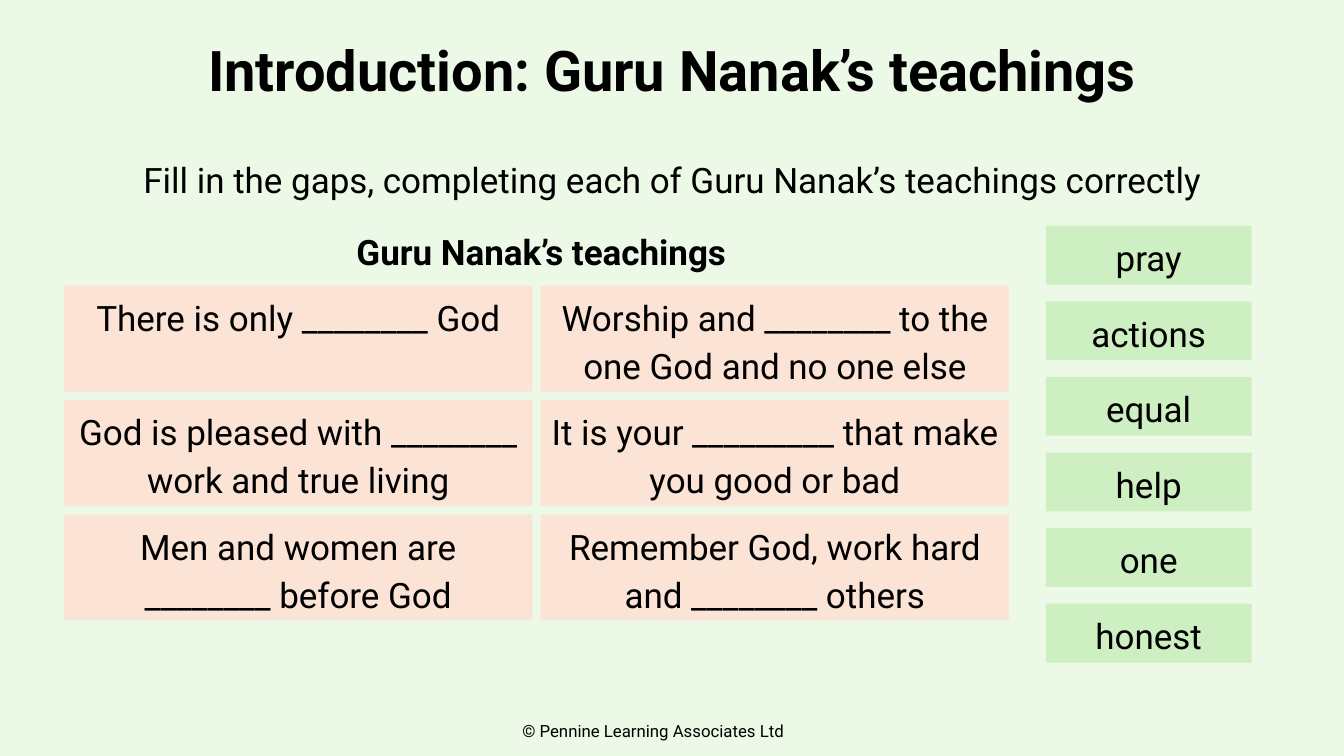
"""Build a fill-in-the-gaps slide about Guru Nanak's teachings."""
from dataclasses import dataclass

from pptx import Presentation
from pptx.dml.color import RGBColor
from pptx.enum.shapes import MSO_SHAPE
from pptx.enum.text import MSO_ANCHOR, MSO_AUTO_SIZE, PP_ALIGN
from pptx.slide import Slide
from pptx.text.text import TextFrame
from pptx.util import Emu, Pt

EMU_PER_PX = 9525
RECTANGLE = MSO_SHAPE.RECTANGLE
TOP, MIDDLE = MSO_ANCHOR.TOP, MSO_ANCHOR.MIDDLE
FIXED, GROW = MSO_AUTO_SIZE.NONE, MSO_AUTO_SIZE.SHAPE_TO_FIT_TEXT
LEFT, CENTER = PP_ALIGN.LEFT, PP_ALIGN.CENTER


@dataclass(frozen=True)
class Theme:
    font: str = "Roboto"
    background: RGBColor = RGBColor(0xEC, 0xF9, 0xE7)
    teaching: RGBColor = RGBColor(0xFB, 0xE3, 0xD6)
    answer: RGBColor = RGBColor(0xCE, 0xEF, 0xC1)
    ink: RGBColor = RGBColor(0, 0, 0)
    title_size: int = 40
    body_size: int = 25
    footer_size: int = 12


THEME = Theme()


@dataclass(frozen=True)
class Box:
    left: int
    top: int
    width: int
    height: int

    def emu(self) -> tuple[Emu, ...]:
        return tuple(
            Emu(length * EMU_PER_PX)
            for length in (self.left, self.top, self.width, self.height)
        )


@dataclass(frozen=True)
class TextStyle:
    size: int = THEME.body_size
    bold: bool = False
    align: PP_ALIGN = CENTER
    line_spacing: float = 1.14
    anchor: MSO_ANCHOR = TOP
    auto_size: MSO_AUTO_SIZE = GROW


BODY = TextStyle()
INSTRUCTION = TextStyle(line_spacing=1.0)
HEADING = TextStyle(bold=True)
FOOTER = TextStyle(size=THEME.footer_size, align=LEFT, line_spacing=1.0)
TITLE = TextStyle(
    size=THEME.title_size, bold=True, line_spacing=0.9, anchor=MIDDLE, auto_size=FIXED
)

TEACHINGS = (
    ("There is only ________ God", "Worship and ________ to the one God and no one else"),
    (
        "God is pleased with ________ work and true living",
        "It is your _________ that make you good or bad",
    ),
    ("Men and women are ________ before God", "Remember God, work hard and ________ others"),
)
ANSWERS = ("pray", "actions", "equal", "help", "one", "honest")

FIRST_TEACHING = Box(61, 272, 446, 101)
TEACHING_STEP_X, TEACHING_STEP_Y = 454, 109
FIRST_ANSWER = Box(996, 215, 196, 56)
ANSWER_STEP = 72


def write_text(frame: TextFrame, text: str, style: TextStyle) -> None:
    frame.word_wrap = True
    frame.auto_size = style.auto_size
    frame.vertical_anchor = style.anchor
    paragraph = frame.paragraphs[0]
    paragraph.alignment = style.align
    paragraph.line_spacing = style.line_spacing
    run = paragraph.add_run()
    run.text = text
    run.font.name = THEME.font
    run.font.size = Pt(style.size)
    run.font.bold = style.bold
    run.font.color.rgb = THEME.ink


def add_title(slide: Slide, box: Box, text: str) -> None:
    title = slide.shapes.title
    title.left, title.top, title.width, title.height = box.emu()
    write_text(title.text_frame, text, TITLE)


def add_label(slide: Slide, box: Box, text: str, style: TextStyle) -> None:
    label = slide.shapes.add_textbox(*box.emu())
    write_text(label.text_frame, text, style)


def add_card(
    slide: Slide, box: Box, text: str, fill: RGBColor, style: TextStyle = BODY
) -> None:
    card = slide.shapes.add_shape(RECTANGLE, *box.emu())
    card.shadow.inherit = False
    card.fill.solid()
    card.fill.fore_color.rgb = fill
    card.line.fill.background()
    write_text(card.text_frame, text, style)


def add_teachings(slide: Slide) -> None:
    first = FIRST_TEACHING
    for row, teachings in enumerate(TEACHINGS):
        for column, teaching in enumerate(teachings):
            box = Box(
                first.left + column * TEACHING_STEP_X,
                first.top + row * TEACHING_STEP_Y,
                first.width,
                first.height,
            )
            add_card(slide, box, teaching, THEME.teaching)


def add_answers(slide: Slide) -> None:
    first = FIRST_ANSWER
    for row, answer in enumerate(ANSWERS):
        box = Box(first.left, first.top + row * ANSWER_STEP, first.width, first.height)
        add_card(slide, box, answer, THEME.answer)


def main() -> None:
    presentation = Presentation()
    presentation.slide_width = Emu(1280 * EMU_PER_PX)
    presentation.slide_height = Emu(720 * EMU_PER_PX)
    title_only = presentation.slide_layouts.get_by_name("Title Only")
    slide = presentation.slides.add_slide(title_only)
    slide.background.fill.solid()
    slide.background.fill.fore_color.rgb = THEME.background

    add_label(slide, Box(488, 682, 305, 29), "© Pennine Learning Associates Ltd", FOOTER)
    add_title(slide, Box(88, 0, 1104, 139), "Introduction: Guru Nanak’s teachings")
    add_card(
        slide,
        Box(88, 146, 1104, 50),
        "Fill in the gaps, completing each of Guru Nanak’s teachings correctly",
        THEME.background,
        INSTRUCTION,
    )
    add_label(slide, Box(322, 209, 387, 55), "Guru Nanak’s teachings", HEADING)
    add_teachings(slide)
    add_answers(slide)
    presentation.save("out.pptx")


if __name__ == "__main__":
    main()
